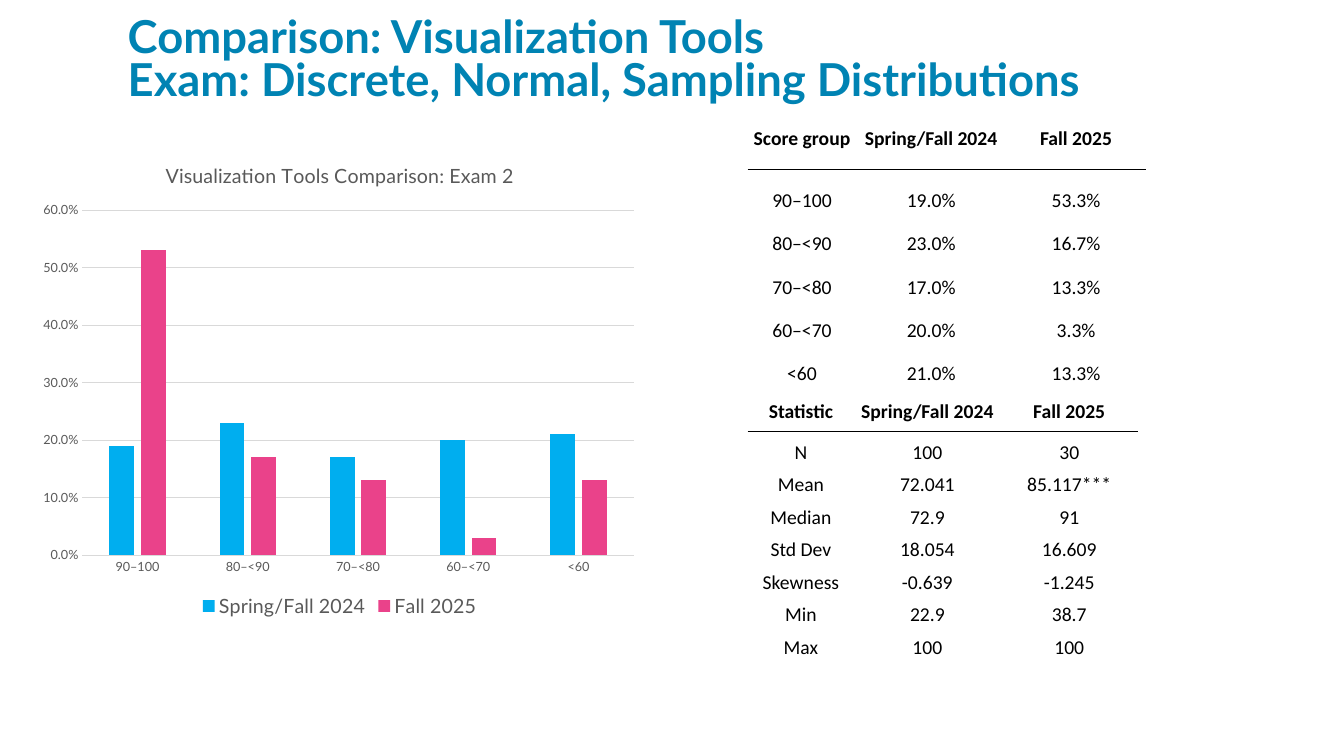
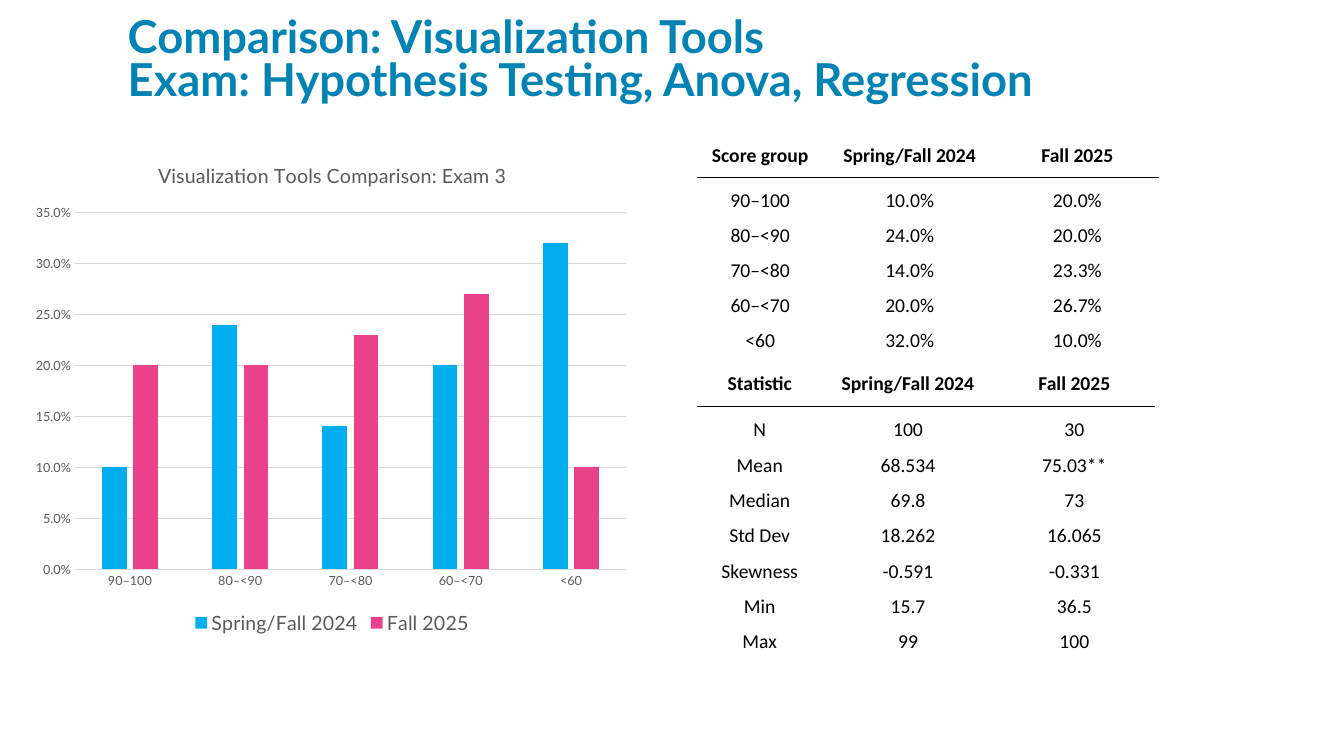
import pptx
import pptx.chart.data
import pptx.dml.color
import pptx.enum.chart
import pptx.enum.text
import pptx.oxml
import pptx.oxml.ns
import pptx.util

Cm = pptx.util.Cm
Pt = pptx.util.Pt
RGB = pptx.dml.color.RGBColor
qn = pptx.oxml.ns.qn

TEAL = RGB(0x00, 0x83, 0xB3)
BLUE = RGB(0x00, 0xAE, 0xEF)
PINK = RGB(0xEA, 0x42, 0x8A)
GREY = RGB(0x59, 0x59, 0x59)
PALE = RGB(0xD9, 0xD9, 0xD9)
BLACK = RGB(0x00, 0x00, 0x00)

TERMS = ("Spring/Fall 2024", "Fall 2025")
GROUPS = ("90–100", "80–<90", "70–<80", "60–<70", "<60")
STATS = ("N", "Mean", "Median", "Std Dev", "Skewness", "Min", "Max")
RATIOS = (2.7, 3.7, 3.48)
PLAIN = "{2D5ABB26-0587-4C30-8999-92F81FD0307C}"

EXAMS = [
    dict(
        topic="Exam: Discrete, Normal, Sampling Distributions",
        name="Visualization Tools Comparison: Exam 2",
        chart=(0.84, 3.61, 15.44, 12.07),
        shares=((0.19, 0.23, 0.17, 0.2, 0.21),
                (0.53, 0.17, 0.13, 0.03, 0.13)),
        rates=(("19.0%", "23.0%", "17.0%", "20.0%", "21.0%"),
               ("53.3%", "16.7%", "13.3%", "3.3%", "13.3%")),
        stats=(("100", "72.041", "72.9", "18.054", "-0.639", "22.9", "100"),
               ("30", "85.117***", "91", "16.609", "-1.245", "38.7", "100")),
        # left, top, width, row height
        scores=(18.84, 3.18, 10.05, 1.09),
        facts=(18.84, 10.06, 9.84, 0.82),
    ),
    dict(
        topic="Exam: Hypothesis Testing, Anova, Regression",
        name="Visualization Tools Comparison: Exam 3",
        chart=(0.65, 3.6, 15.44, 12.5),
        shares=((0.1, 0.24, 0.14, 0.2, 0.32),
                (0.2, 0.2, 0.23, 0.27, 0.1)),
        rates=(("10.0%", "24.0%", "14.0%", "20.0%", "32.0%"),
               ("20.0%", "20.0%", "23.3%", "26.7%", "10.0%")),
        stats=(("100", "68.534", "69.8", "18.262", "-0.591", "15.7", "99"),
               ("30", "75.03**", "73", "16.065", "-0.331", "36.5", "100")),
        scores=(17.57, 3.6, 11.63, 0.88),
        facts=(17.57, 9.36, 11.54, 0.89),
    ),
]


def style(font, size, color, face="Lato", bold=False):
    font.name, font.size, font.bold = face, Pt(size), bold
    font.color.rgb = color


def place(node, index, **spots):
    """Give a chart part a fixed layout, in fractions of the chart."""
    for old in node.findall(qn("c:layout")):
        node.remove(old)
    modes = "".join(f'<c:{k}Mode val="edge"/>' for k in "xy")
    sizes = "".join(f'<c:{k} val="{v}"/>' for k, v in spots.items())
    inner = '<c:layoutTarget val="inner"/>' if "w" in spots else ""
    node.insert(index, pptx.oxml.parse_xml(
        f'<c:layout {pptx.oxml.ns.nsdecls("c")}><c:manualLayout>'
        f'{inner}{modes}{sizes}</c:manualLayout></c:layout>'))


def rule(cell):
    """Draw a thin line under a cell."""
    cell.fill.background()
    cell._tc.get_or_add_tcPr().insert(0, pptx.oxml.parse_xml(
        f'<a:lnB {pptx.oxml.ns.nsdecls("a")} w="6350"><a:solidFill>'
        f'<a:srgbClr val="{BLACK}"/></a:solidFill></a:lnB>'))


class Deck:
    def __init__(self):
        self.show = pptx.Presentation()
        self.show.slide_width, self.show.slide_height = Cm(33.87), Cm(19.05)
        self.slide = None

    def page(self):
        self.slide = self.show.slides.add_slide(self.show.slide_layouts[6])

    def title(self, *lines):
        box = self.slide.shapes.add_textbox(
            Cm(2.97), Cm(0.88), Cm(26.24), Cm(1.9))
        frame = box.text_frame
        frame.word_wrap = True
        frame.vertical_anchor = pptx.enum.text.MSO_ANCHOR.BOTTOM
        para = frame.paragraphs[0]
        para.line_spacing = 0.8
        for i, line in enumerate(lines):
            if i:
                para.add_line_break()
            run = para.add_run()
            run.text = line
            style(run.font, 32.4, TEAL, bold=True)

    def chart(self, spot, name, shares):
        data = pptx.chart.data.CategoryChartData(number_format="0.0%")
        data.categories = GROUPS
        for term, vals in zip(TERMS, shares):
            data.add_series(term, vals)
        chart = self.slide.shapes.add_chart(
            pptx.enum.chart.XL_CHART_TYPE.COLUMN_CLUSTERED,
            *map(Cm, spot), data).chart
        style(chart.font, 10, BLACK)

        run = chart.chart_title.text_frame.paragraphs[0].add_run()
        run.text = name
        style(run.font, 14, GREY)
        place(chart.chart_title.element, 1, x=0.21, y=0.03)
        area = chart.element.find(".//" + qn("c:plotArea"))
        place(area, 0, x=0.08, y=0.14, w=0.9, h=0.72)

        chart.has_legend = True
        chart.legend.position = pptx.enum.chart.XL_LEGEND_POSITION.BOTTOM
        chart.legend.include_in_layout = False
        style(chart.legend.font, 14, GREY)

        plot = chart.plots[0]
        plot.gap_width, plot.overlap = 219, -27
        plot.vary_by_categories = False
        for series, color in zip(plot.series, (BLUE, PINK)):
            series.format.fill.solid()
            series.format.fill.fore_color.rgb = color
        self.axes(chart)

    def axes(self, chart):
        none = pptx.enum.chart.XL_TICK_MARK.NONE
        cat, val = chart.category_axis, chart.value_axis
        for axis in (cat, val):
            axis.major_tick_mark = axis.minor_tick_mark = none
            style(axis.tick_labels.font, 9, GREY)
        val.has_major_gridlines = True
        for line in (cat.format.line, val.major_gridlines.format.line):
            line.color.rgb, line.width = PALE, Pt(0.75)
        val.format.line.fill.background()
        val.tick_labels.number_format = "0.0%"
        val.tick_labels.number_format_is_linked = False

    def table(self, spot, head, names, cols):
        rows = [(head, *TERMS), *zip(names, *cols)]
        left, top, width, high = spot
        frame = self.slide.shapes.add_table(
            len(rows), len(RATIOS), Cm(left), Cm(top),
            Cm(width), Cm(high * len(rows)))
        frame.element.find(".//" + qn("a:tableStyleId")).text = PLAIN
        grid = frame.table
        grid.horz_banding = False
        for col, ratio in zip(grid.columns, RATIOS):
            col.width = Cm(width * ratio / sum(RATIOS))
        for r, row in enumerate(rows):
            grid.rows[r].height = Cm(high)
            for c, text in enumerate(row):
                self.cell(grid.cell(r, c), text, r == 0)

    def cell(self, cell, text, head):
        anchor = pptx.enum.text.MSO_ANCHOR
        cell.vertical_anchor = anchor.TOP if head else anchor.BOTTOM
        cell.margin_left = cell.margin_right = cell.margin_top = Cm(0.02)
        cell.margin_bottom = 0
        para = cell.text_frame.paragraphs[0]
        para.alignment = pptx.enum.text.PP_ALIGN.CENTER
        run = para.add_run()
        run.text = text
        style(run.font, 14, BLACK, "Calibri", head)
        if head:
            rule(cell)
        else:
            cell.fill.background()


def main():
    deck = Deck()
    for exam in EXAMS:
        deck.page()
        deck.title("Comparison: Visualization Tools", exam["topic"])
        deck.chart(exam["chart"], exam["name"], exam["shares"])
        deck.table(exam["scores"], "Score group", GROUPS, exam["rates"])
        deck.table(exam["facts"], "Statistic", STATS, exam["stats"])
    deck.show.save("out.pptx")


if __name__ == "__main__":
    main()
